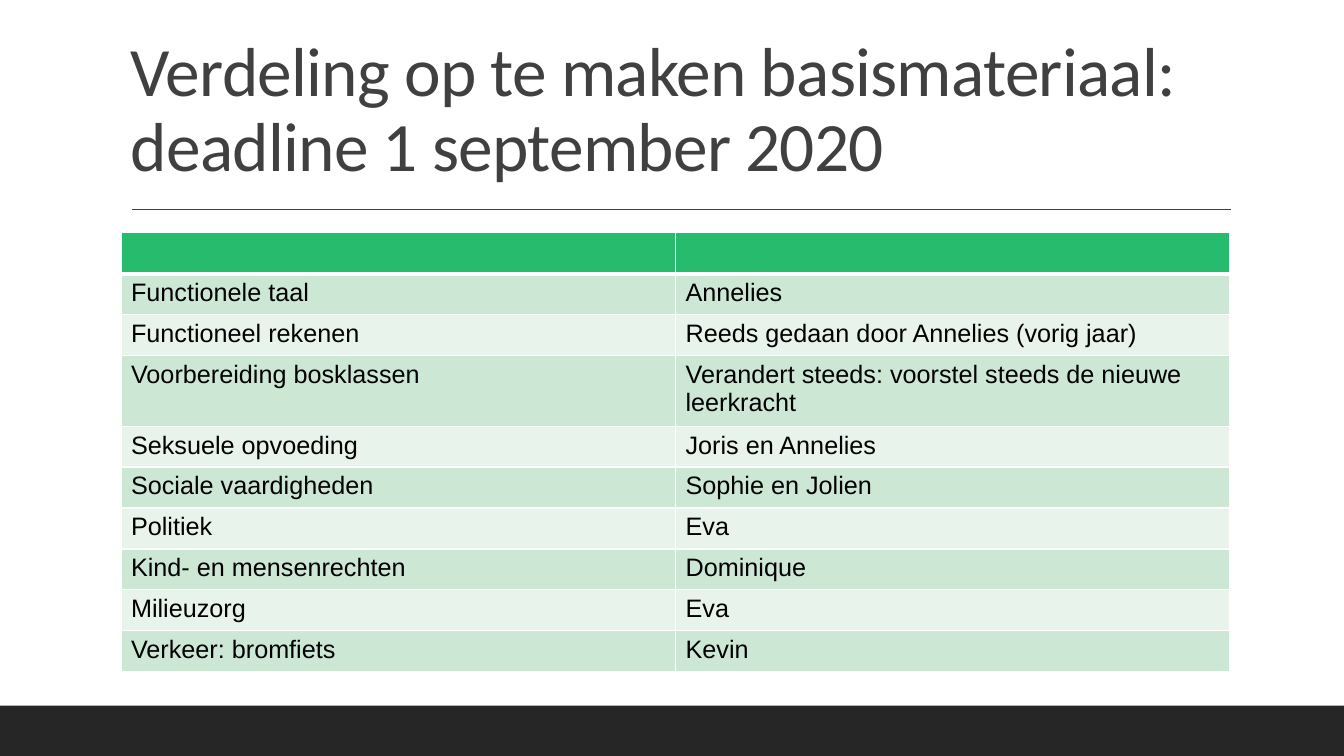
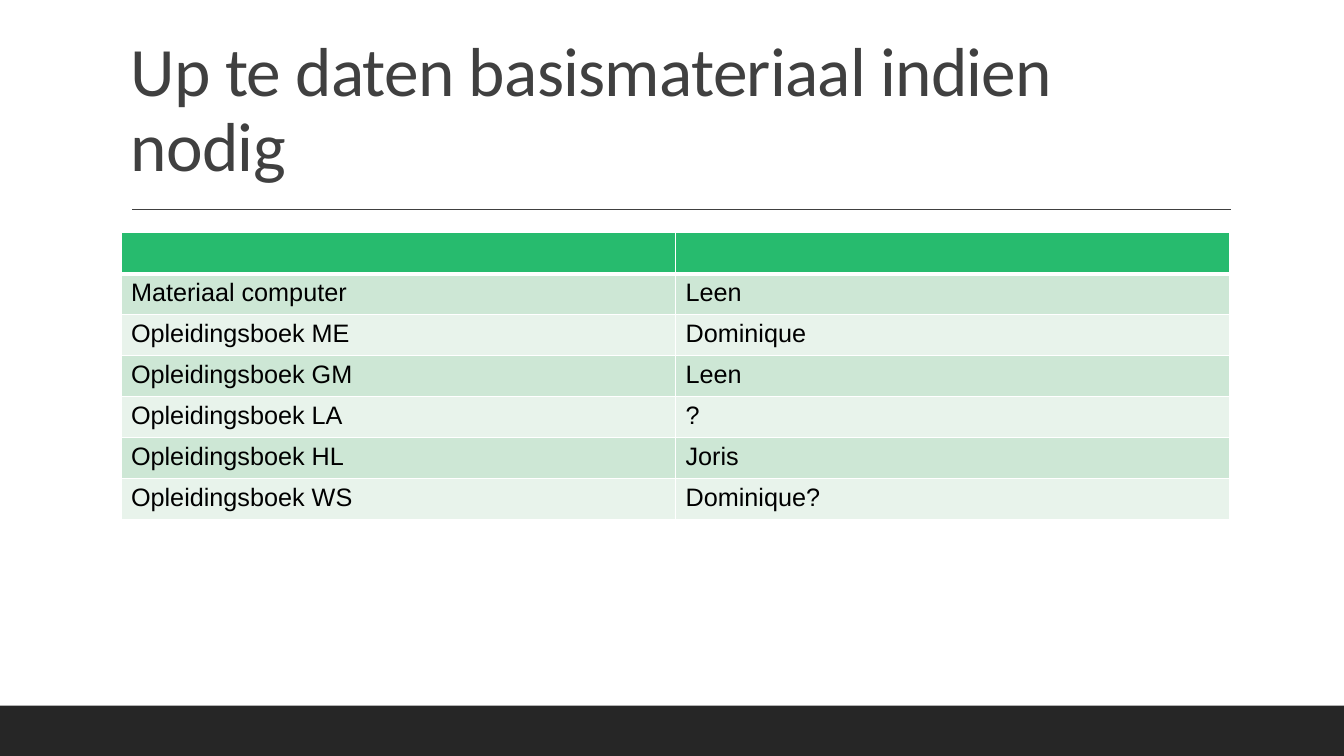
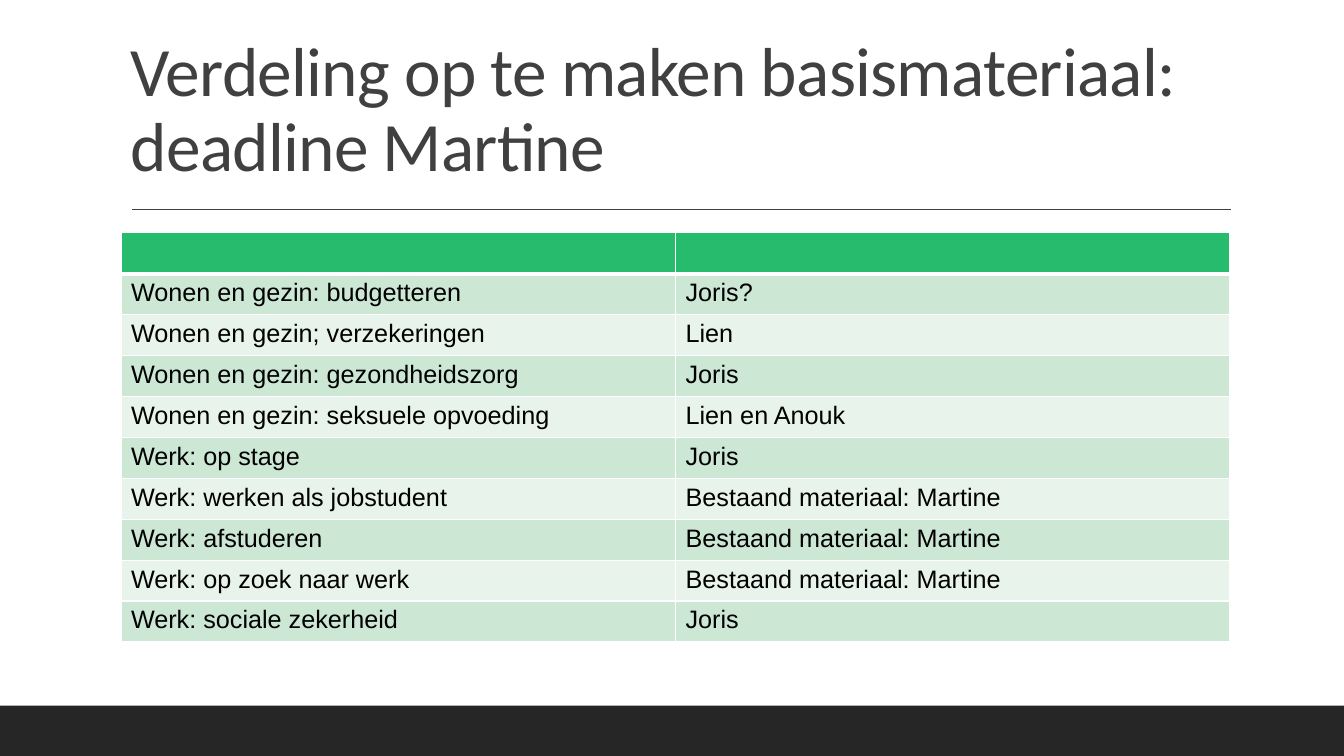
from lxml.etree import SubElement
from pptx import Presentation
from pptx.dml.color import RGBColor
from pptx.enum.shapes import MSO_CONNECTOR, MSO_SHAPE
from pptx.enum.text import MSO_ANCHOR
from pptx.oxml.ns import qn
from pptx.util import Inches, Pt

# Content: title lines and table rows of each slide
SLIDES = [
    (
        ["Verdeling op te maken basismateriaal:", "deadline 1 september 2020"],
        [
            ("Functionele taal", "Annelies"),
            ("Functioneel rekenen", "Reeds gedaan door Annelies (vorig jaar)"),
            ("Voorbereiding bosklassen",
             "Verandert steeds: voorstel steeds de nieuwe leerkracht"),
            ("Seksuele opvoeding", "Joris en Annelies"),
            ("Sociale vaardigheden", "Sophie en Jolien"),
            ("Politiek", "Eva"),
            ("Kind- en mensenrechten", "Dominique"),
            ("Milieuzorg", "Eva"),
            ("Verkeer: bromfiets", "Kevin"),
        ],
    ),
    (
        ["Up te daten basismateriaal indien nodig"],
        [
            ("Materiaal computer", "Leen"),
            ("Opleidingsboek ME", "Dominique"),
            ("Opleidingsboek GM", "Leen"),
            ("Opleidingsboek LA", "?"),
            ("Opleidingsboek HL", "Joris"),
            ("Opleidingsboek WS", "Dominique?"),
        ],
    ),
    (
        ["Verdeling op te maken basismateriaal:", "deadline Martine"],
        [
            ("Wonen en gezin: budgetteren", "Joris?"),
            ("Wonen en gezin; verzekeringen", "Lien"),
            ("Wonen en gezin: gezondheidszorg", "Joris"),
            ("Wonen en gezin: seksuele opvoeding", "Lien en Anouk"),
            ("Werk: op stage", "Joris"),
            ("Werk: werken als jobstudent", "Bestaand materiaal: Martine"),
            ("Werk: afstuderen", "Bestaand materiaal: Martine"),
            ("Werk: op zoek naar werk", "Bestaand materiaal: Martine"),
            ("Werk: sociale zekerheid", "Joris"),
        ],
    ),
]

# Shared style
DARK, GREY, BLACK, WHITE = "262626", "404040", "000000", "FFFFFF"
HEADER_GREEN = "27BB6E"
BAND_GREENS = ["CDE7D5", "E8F3EB"]
TITLE_FONT, BODY_FONT = "Calibri", "Arial"
SLIDE_WIDTH, SLIDE_HEIGHT = Inches(13.33), Inches(7.5)
LEFT, WIDTH = Inches(1.2), Inches(11)
ROW_HEIGHT = Inches(4.06) // 10
THIN, THICK = Pt(1), Pt(3)


def rgb(color):
    return RGBColor.from_string(color)


def style_font(font, name, size, color):
    font.name, font.size = name, Pt(size)
    font.color.rgb = rgb(color)


def add_frame(slide):
    """Footer band and the rule under the title."""
    band_height = Inches(0.5)
    band = slide.shapes.add_shape(
        MSO_SHAPE.RECTANGLE, 0, SLIDE_HEIGHT - band_height, SLIDE_WIDTH, band_height)
    band.shadow.inherit = False
    band.fill.solid()
    band.fill.fore_color.rgb = rgb(DARK)
    band.line.fill.background()

    rule_y = Inches(2.08)
    rule = slide.shapes.add_connector(
        MSO_CONNECTOR.STRAIGHT, Inches(1.31), rule_y, Inches(12.21), rule_y)
    rule.line.color.rgb = rgb(GREY)
    rule.line.width = THIN
    SubElement(rule._element.spPr, qn("a:effectLst"))


def add_title(slide, lines):
    box = slide.shapes.add_textbox(LEFT, Inches(0.31), WIDTH, Inches(1.59))
    frame = box.text_frame
    frame.word_wrap = True
    frame.vertical_anchor = MSO_ANCHOR.BOTTOM
    paragraph = frame.paragraphs[0]
    paragraph.line_spacing = 0.9
    for index, line in enumerate(lines):
        if index:
            paragraph.add_line_break()
        run = paragraph.add_run()
        run.text = line
        style_font(run.font, TITLE_FONT, 49.5, GREY)
        run._r.get_or_add_rPr().set("spc", "-50")


def set_borders(cell, top, bottom):
    properties = cell._tc.get_or_add_tcPr()
    for side, width in (("L", THIN), ("R", THIN), ("T", top), ("B", bottom)):
        line = SubElement(properties, qn(f"a:ln{side}"), w=str(width))
        fill = SubElement(line, qn("a:solidFill"))
        SubElement(fill, qn("a:srgbClr"), val=WHITE)


def add_task_table(slide, tasks):
    rows = [("", "")] + tasks
    table = slide.shapes.add_table(
        len(rows), 2, LEFT, Inches(2.31), WIDTH, ROW_HEIGHT * len(rows)).table
    for row_index, texts in enumerate(rows):
        table.rows[row_index].height = ROW_HEIGHT
        color = BAND_GREENS[(row_index - 1) % 2] if row_index else HEADER_GREEN
        # The header is set off by a thicker line
        top = THICK if row_index == 1 else THIN
        bottom = THICK if row_index == 0 else THIN
        for column_index, text in enumerate(texts):
            cell = table.cell(row_index, column_index)
            set_borders(cell, top, bottom)
            cell.fill.solid()
            cell.fill.fore_color.rgb = rgb(color)
            if text:
                run = cell.text_frame.paragraphs[0].add_run()
                run.text = text
                style_font(run.font, BODY_FONT, 18, BLACK)


def main():
    presentation = Presentation()
    presentation.slide_width, presentation.slide_height = SLIDE_WIDTH, SLIDE_HEIGHT
    for title_lines, tasks in SLIDES:
        slide = presentation.slides.add_slide(presentation.slide_layouts[6])
        add_frame(slide)
        add_title(slide, title_lines)
        add_task_table(slide, tasks)
    presentation.save("out.pptx")


if __name__ == "__main__":
    main()
